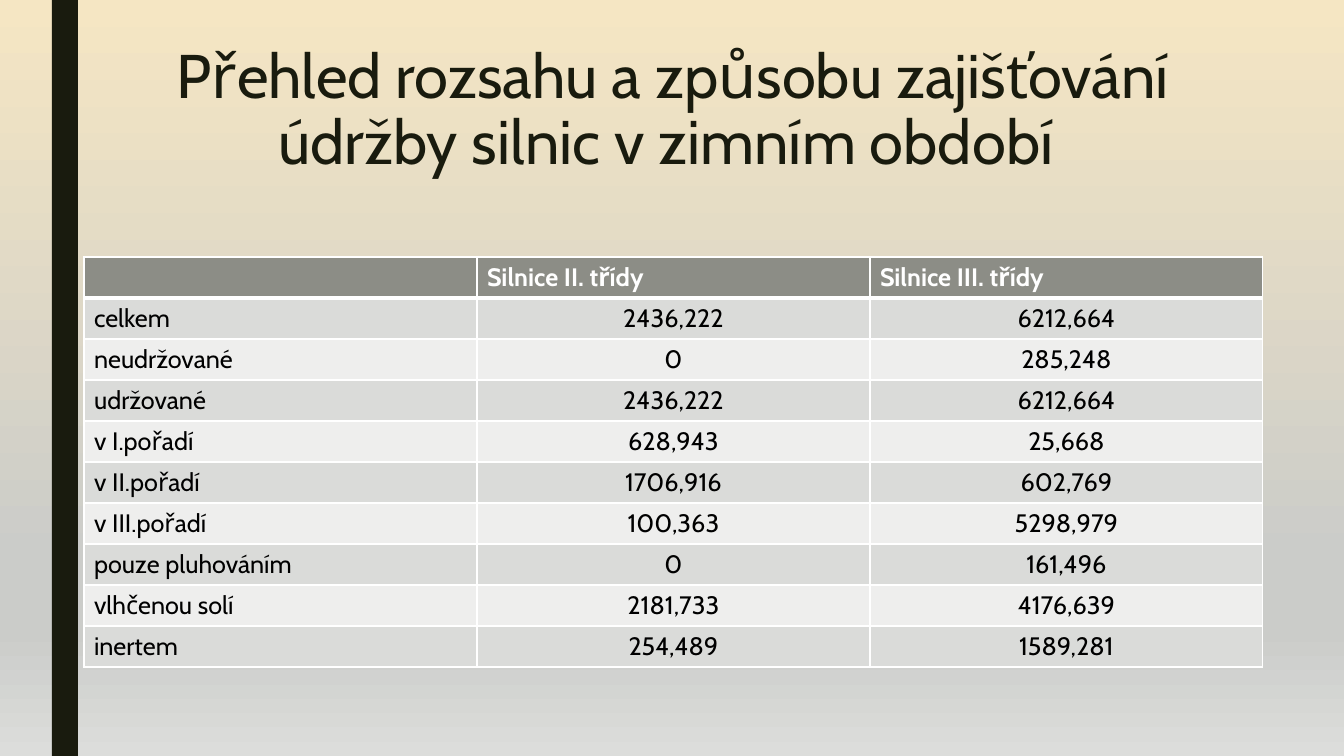
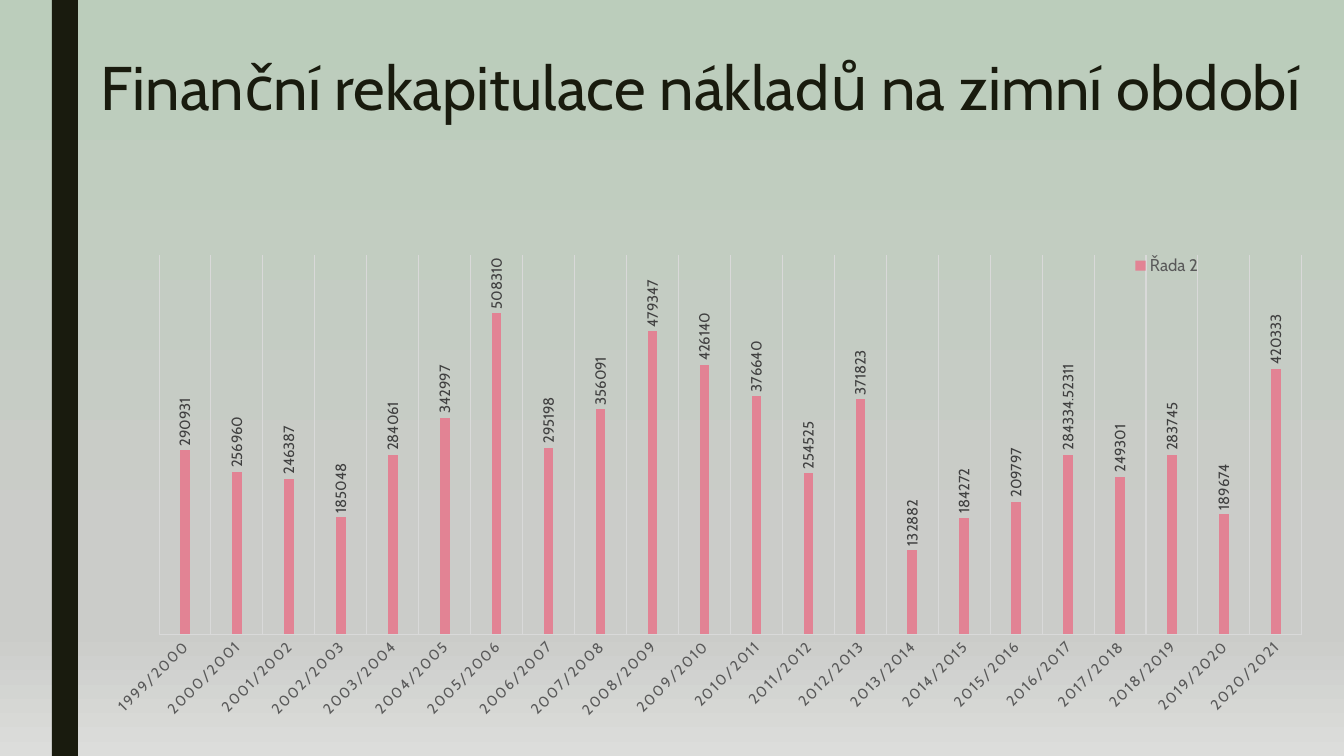
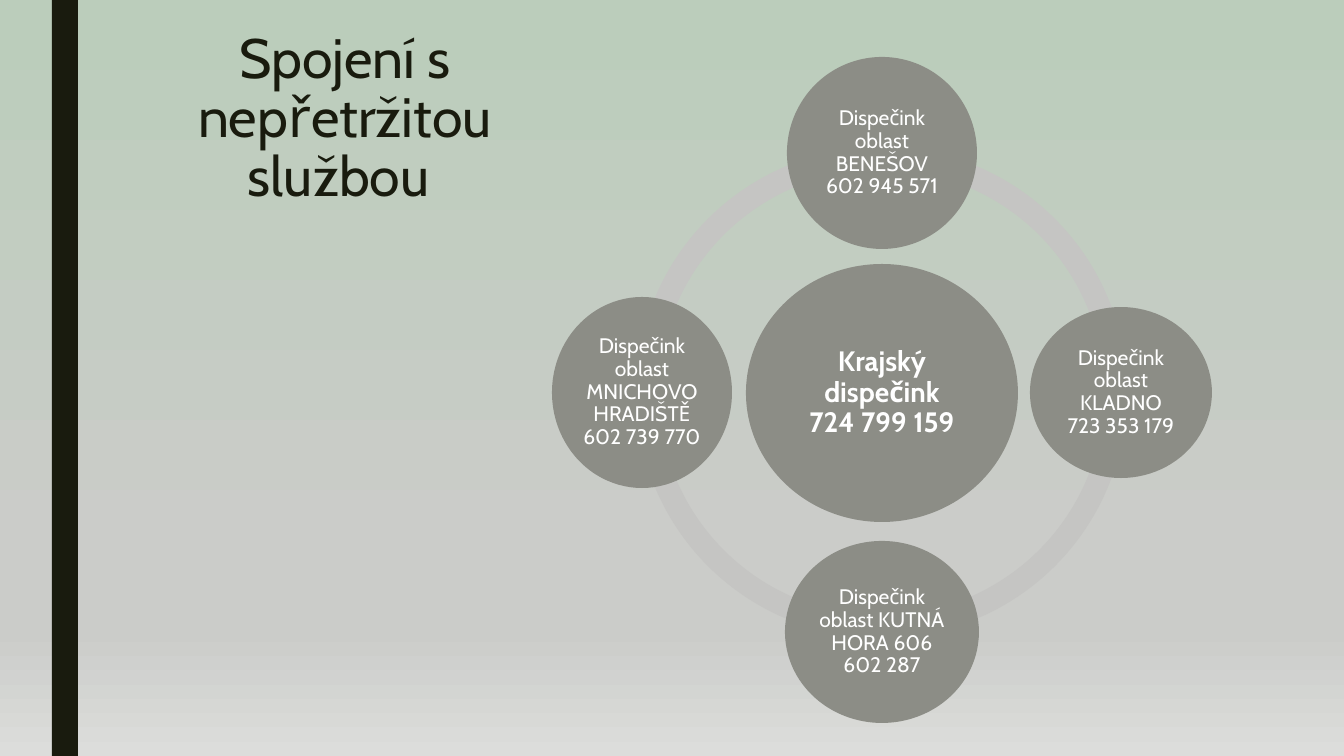
import pptx
import pptx.chart.data
import pptx.dml.color
import pptx.enum.chart
import pptx.enum.shapes
import pptx.enum.text
import pptx.oxml
import pptx.oxml.ns
import pptx.util
from lxml import etree

PX = 914400 / 100.8
FONT = "Cabin"
DARK, GREY, WHITE, BLACK = "191B0E", "8C8D86", "FFFFFF", "000000"
STRIPES = ("EEEEED", "DADBD9")
RING, GRID, BAR = "C5C5C3", "D9D9D9", "E28394"
AXIS_TEXT, LABEL_TEXT = "595959", "404040"
SAND, SAGE = "F5E6C3", "BBCDBB"
LOWER_STOPS = [(74, "CBCCC9"), (83, "CBCCC9"), (100, "DCDDDB")]

CENTER = pptx.enum.text.PP_ALIGN.CENTER
LEFT = pptx.enum.text.PP_ALIGN.LEFT
MIDDLE = pptx.enum.text.MSO_ANCHOR.MIDDLE
SHAPE = pptx.enum.shapes.MSO_SHAPE
qn = pptx.oxml.ns.qn


def px(n):
    return pptx.util.Emu(round(n * PX))


def rgb(color):
    return pptx.dml.color.RGBColor.from_string(color)


def set_font(font, size, color, bold=False):
    font.name, font.size, font.bold = FONT, pptx.util.Pt(size), bold
    font.color.rgb = rgb(color)


def set_border(cell, side, points):
    ln = etree.SubElement(cell._tc.get_or_add_tcPr(), qn("a:ln" + side),
                          w=str(pptx.util.Pt(points)))
    fill = etree.SubElement(ln, qn("a:solidFill"))
    etree.SubElement(fill, qn("a:srgbClr"), val=WHITE)


def set_layout(parent, index, **fractions):
    """Place a chart part by fractions of the chart frame."""
    for old in parent.findall(qn("c:layout")):
        parent.remove(old)
    layout = pptx.oxml.parse_xml(
        "<c:layout %s><c:manualLayout/></c:layout>" % pptx.oxml.ns.nsdecls("c"))
    parent.insert(index, layout)
    if "w" in fractions:
        etree.SubElement(layout[0], qn("c:layoutTarget"), val="inner")
    for axis in "xy":
        etree.SubElement(layout[0], qn("c:%sMode" % axis), val="edge")
    for key, value in fractions.items():
        etree.SubElement(layout[0], qn("c:" + key), val=str(value))


class Deck:
    def __init__(self):
        self.prs = pptx.Presentation()
        self.prs.slide_width, self.prs.slide_height = px(1344), px(756)
        self.s = None

    def new_slide(self, top_color):
        self.s = self.prs.slides.add_slide(self.prs.slide_layouts[6])
        fill = self.s.background.fill
        fill.gradient()
        fill.gradient_angle = 270
        stops = next(self.s.element.iter(qn("a:gsLst")))
        for old in list(stops):
            stops.remove(old)
        for percent, color in [(0, top_color)] + LOWER_STOPS:
            stop = etree.SubElement(stops, qn("a:gs"), pos=str(percent * 1000))
            etree.SubElement(stop, qn("a:srgbClr"), val=color)
        self.shape(SHAPE.RECTANGLE, 52, 0, 26, 756, DARK)

    def shape(self, kind, x, y, w, h, color):
        sp = self.s.shapes.add_shape(kind, px(x), px(y), px(w), px(h))
        sp.shadow.inherit = False
        sp.fill.solid()
        sp.fill.fore_color.rgb = rgb(color)
        sp.line.fill.background()
        return sp

    def set_text(self, tf, text, size, color, bold=False, align=CENTER, spacing=None):
        tf.text = text
        tf.word_wrap = True
        for p in tf.paragraphs:
            p.alignment = align
            if spacing:
                p.line_spacing = spacing
            for r in p.runs:
                set_font(r.font, size, color, bold)

    def title(self, text, x, y, w, h, size=44, align=CENTER):
        sp = self.s.shapes.add_textbox(px(x), px(y), px(w), px(h))
        self.set_text(sp.text_frame, text, size, DARK, align=align, spacing=0.89)

    def bubble(self, text, x, y, w, h, size=15, bold=False):
        sp = self.shape(SHAPE.OVAL, x, y, w, h, GREY)
        tf = sp.text_frame
        tf.margin_left = tf.margin_right = tf.margin_top = tf.margin_bottom = px(2)
        tf.vertical_anchor = MIDDLE
        self.set_text(tf, text, size, WHITE, bold, spacing=0.9)

    def ring(self, x, y, size):
        """Draw a ring of four quarter arcs."""
        for start in (180, 90, 0, 270):
            arc = self.shape(SHAPE.BLOCK_ARC, x, y, size, size, RING)
            end = (start + 90) % 360
            for i, value in enumerate((start * 0.6, end * 0.6, 0.046)):
                arc.adjustments[i] = value

    def table(self, rows, x, y, col_w, row_h):
        n_rows, n_cols = len(rows), len(rows[0])
        table = self.s.shapes.add_table(n_rows, n_cols, px(x), px(y),
                                        px(col_w * n_cols), px(row_h * n_rows)).table
        for col in table.columns:
            col.width = px(col_w)
        for i, row in enumerate(rows):
            table.rows[i].height = px(row_h)
            header = i == 0
            for j, text in enumerate(row):
                cell = table.cell(i, j)
                for side in "LRTB":
                    thick = (i, side) in ((0, "B"), (1, "T"))
                    set_border(cell, side, 3 if thick else 1)
                cell.fill.solid()
                cell.fill.fore_color.rgb = rgb(GREY if header else STRIPES[i % 2])
                self.set_text(cell.text_frame, text, 18, WHITE if header else BLACK,
                              header, LEFT if header or j == 0 else CENTER)

    def column_chart(self, name, categories, values, x, y, w, h):
        data = pptx.chart.data.CategoryChartData()
        data.categories = categories
        data.add_series(name, values)
        chart = self.s.shapes.add_chart(
            pptx.enum.chart.XL_CHART_TYPE.COLUMN_CLUSTERED,
            px(x), px(y), px(w), px(h), data).chart
        set_font(chart.font, 10, BLACK)
        chart.has_title = False

        plot = chart.plots[0]
        plot.gap_width, plot.overlap = 444, 63
        plot.vary_by_categories = False
        series = plot.series[0]
        series.invert_if_negative = False
        series.format.fill.solid()
        series.format.fill.fore_color.rgb = rgb(BAR)
        labels = series.data_labels
        labels.show_value = True
        labels.position = pptx.enum.chart.XL_LABEL_POSITION.OUTSIDE_END
        set_font(labels.font, 10.6, LABEL_TEXT)

        value_axis = chart.value_axis
        value_axis.minimum_scale, value_axis.maximum_scale = 0, 600000
        value_axis.has_major_gridlines = False
        value_axis.visible = False
        axis = chart.category_axis
        axis.has_major_gridlines = True
        axis.major_tick_mark = pptx.enum.chart.XL_TICK_MARK.NONE
        for line in (axis.format.line, axis.major_gridlines.format.line):
            line.color.rgb = rgb(GRID)
            line.width = pptx.util.Pt(0.75)
        set_font(axis.tick_labels.font, 10.6, AXIS_TEXT)

        chart.has_legend = True
        chart.legend.position = pptx.enum.chart.XL_LEGEND_POSITION.TOP
        chart.legend.include_in_layout = False
        set_font(chart.legend.font, 12, AXIS_TEXT)

        root = chart._chartSpace
        for owner, degrees in (("c:catAx", -45), ("c:ser/c:dLbls", -90)):
            body = root.xpath("//%s/c:txPr/a:bodyPr" % owner)[0]
            body.set("rot", str(degrees * 60000))
            body.set("vert", "horz")
        root.xpath("//c:catAx/c:txPr//a:defRPr")[0].set("spc", "120")
        set_layout(root.xpath("//c:plotArea")[0], 0, x=0.055, y=0.087, w=0.924, h=0.729)
        set_layout(root.xpath("//c:legend")[0], 1, x=0.84, y=0.08)


ROADS = [
    ("", "Silnice II. třídy", "Silnice III. třídy"),
    ("celkem", "2436,222", "6212,664"),
    ("neudržované", "0", "285,248"),
    ("udržované", "2436,222", "6212,664"),
    ("v I.pořadí", "628,943", "25,668"),
    ("v II.pořadí", "1706,916", "602,769"),
    ("v III.pořadí", "100,363", "5298,979"),
    ("pouze pluhováním", "0", "161,496"),
    ("vlhčenou solí", "2181,733", "4176,639"),
    ("inertem", "254,489", "1589,281"),
]
WINTERS = ["%d/%d" % (year, year + 1) for year in range(1999, 2021)]
COSTS = [290931, 256960, 246387, 185048, 284061, 342997, 508310, 295198,
         356091, 479347, 426140, 376640, 254525, 371823, 132882, 184272,
         209797, 284334.52311, 249301, 283745, 189674, 420333]
DISPATCH = [
    ("Dispečink oblast BENEŠOV\v602 945 571", 787, 57, 190, 192),
    ("Dispečink oblast KLADNO\v723 353 179", 1030, 307, 182, 171),
    ("Dispečink oblast KUTNÁ HORA 606 602 287", 785, 541, 194, 182),
    ("Dispečink oblast MNICHOVO HRADIŠTĚ\v602 739 770", 552, 297, 180, 191),
]


def main():
    deck = Deck()

    deck.new_slide(SAND)
    deck.title("Přehled rozsahu a způsobu zajišťování údržby silnic v zimním období ",
               157, 41, 1032, 161)
    deck.table(ROADS, 84, 257, 393, 41)

    deck.new_slide(SAGE)
    deck.title("Finanční rekapitulace nákladů na zimní období",
               91, 53, 1237, 156, align=LEFT)
    deck.column_chart("Řada 2", WINTERS, COSTS, 91, 210, 1237, 520)

    deck.new_slide(SAGE)
    deck.title("Spojení s nepřetržitou službou ", 113, 26, 464, 91, size=39.6)
    deck.ring(636, 147, 491)
    deck.bubble("Krajský dispečink\v724 799 159", 746, 264, 272, 258, 20, True)
    for bubble in DISPATCH:
        deck.bubble(*bubble)

    deck.prs.save("out.pptx")


if __name__ == "__main__":
    main()
